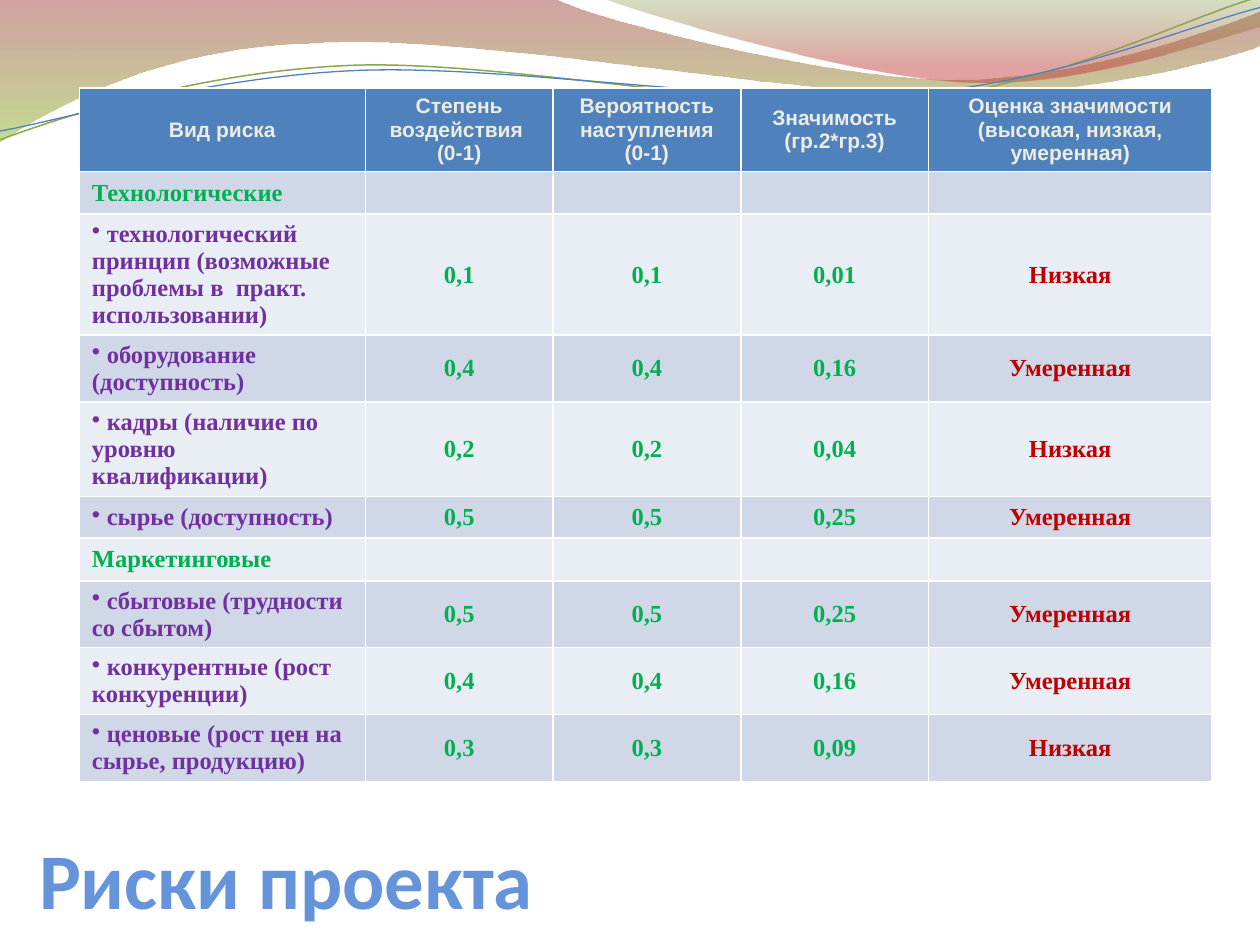
from lxml import etree
from pptx import Presentation
from pptx import util as u
from pptx.dml.color import RGBColor
from pptx.enum import text
from pptx.oxml.ns import qn

HUES = {
    "title": "6594DA", "head": "4F81BD", "cream": "EEECE1",
    "dark": "D0D8E8", "light": "E9EDF4",
    "green": "00B050", "plum": "7030A0", "red": "C00000",
    "brick": "973330", "lime": "95C238", "moss": "769537", "rose": "BE3330",
    "leaf": "89A54F", "blue": "4F81BD",
}
RGB = {name: RGBColor.from_string(hue) for name, hue in HUES.items()}
UNIT = 100

deck = Presentation()
deck.slide_width, deck.slide_height = u.Inches(10), u.Inches(7.5)
slide = deck.slides.add_slide(deck.slide_layouts[5])


def draw(start, parts, close):
    ends = [(round(p[-2] * UNIT), round(p[-1] * UNIT)) for p in [start] + parts]
    pen = slide.shapes.build_freeform(*ends[0], scale=u.Inches(1) / UNIT)
    pen.add_line_segments(ends[1:], close=close)
    shape = pen.convert_to_shape()
    shape.shadow.inherit = False
    left, top = (min(axis) for axis in zip(*ends))
    sides = list(shape._element.spPr.iter(qn("a:lnTo")))
    for side, part in zip(sides, parts):
        if len(part) == 2:
            continue
        bend = etree.Element(qn("a:cubicBezTo"))
        for x, y in zip(part[::2], part[1::2]):
            etree.SubElement(bend, qn("a:pt"), x=str(round(x * UNIT) - left),
                             y=str(round(y * UNIT) - top))
        side.getparent().replace(side, bend)
    return shape


WAVES = [
    ((0, 0), [(4.4, -0.01),
              (4.76, 0.17, 6.64, 0.63, 7.58, 0.63),
              (8.53, 0.63, 9.58, 0.26, 10, 0.09),
              (10.01, 0.36),
              (9.83, 0.44, 8.7, 0.76, 7.46, 0.75),
              (6.22, 0.75, 3.82, 0.28, 2.57, 0.34),
              (1.29, 0.36, 0.46, 0.83, -0.01, 1.13)],
     [(0, "brick", 45), (1, "lime", 55)]),
    ((4.79, -0.01), [(5.09, 0.11, 6.82, 0.62, 7.69, 0.65),
                     (8.56, 0.69, 9.61, 0.32, 10, 0.21),
                     (10, 0)],
     [(0, "moss", 30), (0.8, "rose", 45)]),
]
for start, parts, stops in WAVES:
    wave = draw(start, parts, True)
    wave.line.fill.background()
    wave.fill.gradient()
    wave.fill.gradient_angle = 270
    for stop, (place, hue, _) in zip(wave.fill.gradient_stops, stops):
        stop.position = place
        stop.color.rgb = RGB[hue]
    tints = wave._element.spPr.iter(qn("a:srgbClr"))
    for tint, (_, _, share) in zip(list(tints), stops):
        etree.SubElement(tint, qn("a:alpha"), val=str(share * 1000))

LINES = [
    ((0, 1.11), [(0.48, 0.93, 1.58, 0.57, 2.77, 0.52),
                 (3.95, 0.47, 5.93, 0.89, 7.13, 0.8),
                 (8.33, 0.71, 9.38, 0.15, 9.98, -0.02)], "leaf", 0.85),
    ((0, 1.04), [(0.47, 0.96, 1.64, 0.61, 2.83, 0.56),
                 (4.03, 0.51, 5.97, 0.84, 7.17, 0.75),
                 (8.36, 0.67, 9.41, 0.21, 10, 0.06)], "blue", 0.75),
]
for start, parts, hue, width in LINES:
    curve = draw(start, parts, False)
    curve.fill.background()
    curve.line.color.rgb = RGB[hue]
    curve.line.width = u.Pt(width)

title = slide.shapes.title
title.left, title.top = u.Inches(0.31), u.Inches(6.64)
title.width, title.height = u.Inches(8.95), u.Inches(0.7)
frame = title.text_frame
frame.text = "Риски проекта"
frame.auto_size = text.MSO_AUTO_SIZE.NONE
frame.vertical_anchor = text.MSO_ANCHOR.BOTTOM
frame.margin_left = frame.margin_right = frame.margin_bottom = 0
para = frame.paragraphs[0]
para.alignment = text.PP_ALIGN.LEFT
para.font.name, para.font.size, para.font.bold = "Calibri", u.Pt(45), True
para.font.color.rgb = RGB["title"]

HEADS = ["Вид риска", "Степень воздействия \n(0-1)", "Вероятность наступления (0-1)",
         "Значимость (гр.2*гр.3)", "Оценка значимости (высокая, низкая, умеренная)"]
RISKS = [
    ["Технологические", "", "", "", ""],
    [" технологический принцип (возможные проблемы в  практ. использовании)",
     "0,1", "0,1", "0,01", "Низкая"],
    [" оборудование (доступность)", "0,4", "0,4", "0,16", "Умеренная"],
    [" кадры (наличие по уровню квалификации)", "0,2", "0,2", "0,04", "Низкая"],
    [" сырье (доступность)", "0,5", "0,5", "0,25", "Умеренная"],
    ["Маркетинговые", "", "", "", ""],
    [" сбытовые (трудности со сбытом)", "0,5", "0,5", "0,25", "Умеренная"],
    [" конкурентные (рост конкуренции)", "0,4", "0,4", "0,16", "Умеренная"],
    [" ценовые (рост цен на сырье, продукцию)", "0,3", "0,3", "0,09", "Низкая"],
]
WIDTHS = [2.27, 1.49, 1.49, 1.49, 2.25]
TALLS = [0.66, 0.34, 0.96, 0.53, 0.75, 0.33, 0.34, 0.53, 0.53, 0.53]

grid = slide.shapes.add_table(
    len(TALLS), len(WIDTHS), u.Inches(0.63), u.Inches(0.7),
    u.Inches(sum(WIDTHS)), u.Inches(sum(TALLS))).table
for col, width in zip(grid.columns, WIDTHS):
    col.width = u.Inches(width)
for row, tall in zip(grid.rows, TALLS):
    row.height = u.Inches(tall)

for r, row in enumerate([HEADS] + RISKS):
    for c, words in enumerate(row):
        cell = grid.cell(r, c)
        cell.text = words
        cell.vertical_anchor = text.MSO_ANCHOR.MIDDLE
        cell.fill.solid()
        cell.fill.fore_color.rgb = RGB["head" if r == 0 else "dark" if r % 2 else "light"]
        item = r > 0 and c == 0 and words.startswith(" ")
        hue = "cream" if r == 0 else "plum" if item else "red" if c == 4 else "green"
        for para in cell.text_frame.paragraphs:
            para.alignment = text.PP_ALIGN.CENTER if r == 0 or c else text.PP_ALIGN.LEFT
            para.font.name = "Times New Roman" if r else "Arial"
            para.font.size = u.Pt(14 if r else 12)
            para.font.bold = True
            para.font.color.rgb = RGB[hue]
            if item:
                props = para._p.get_or_add_pPr()
                props.set("marL", "0")
                props.set("indent", "0")
                mark = etree.Element(qn("a:buChar"), char="•")
                props.find(qn("a:defRPr")).addprevious(mark)

deck.save("out.pptx")
